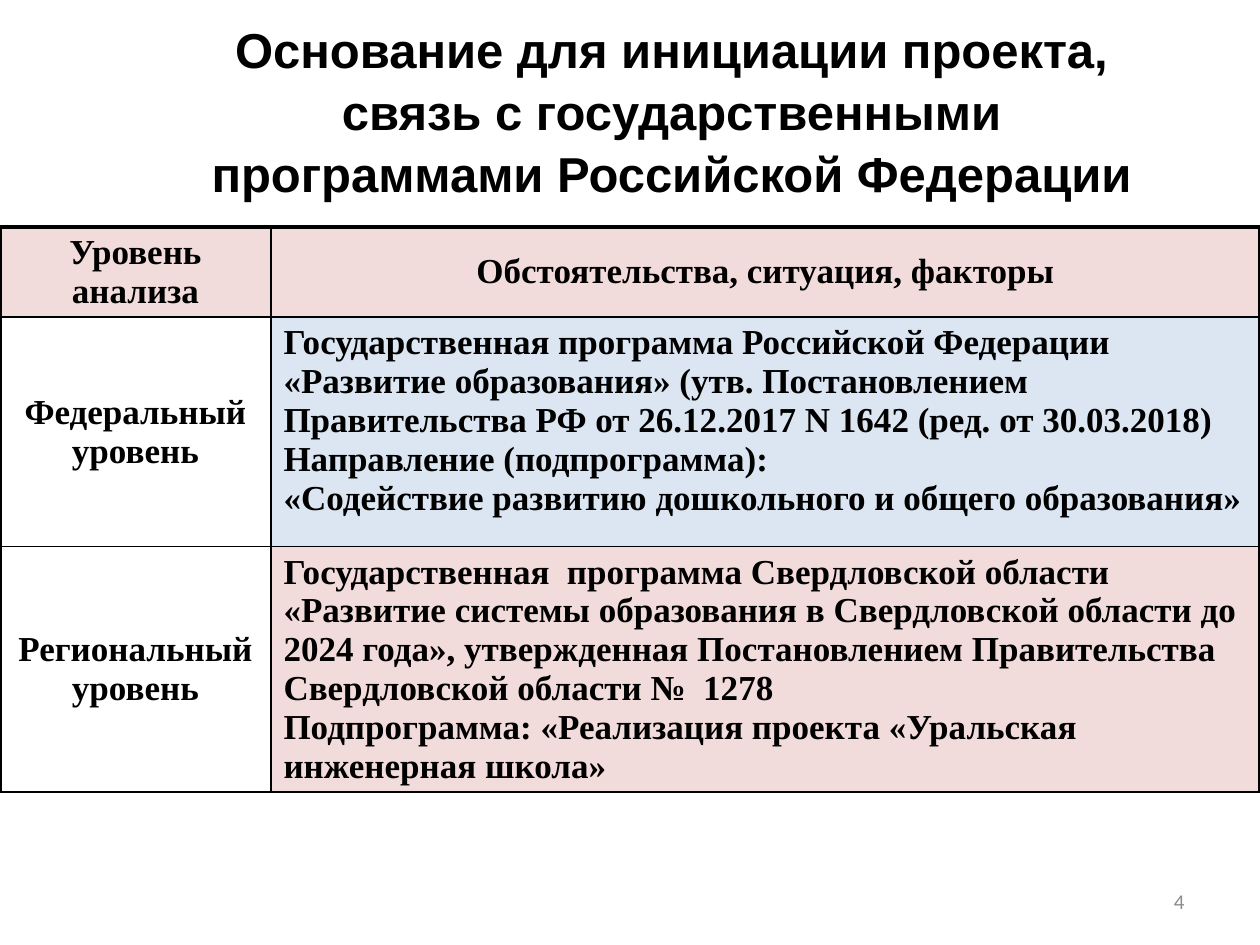
from dataclasses import dataclass

from lxml.etree import SubElement
from pptx import Presentation
from pptx.dml.color import RGBColor
from pptx.enum.text import MSO_ANCHOR, MSO_AUTO_SIZE, PP_ALIGN
from pptx.oxml.ns import qn
from pptx.util import Inches, Pt


@dataclass(frozen=True)
class Theme:
    ink: str = "000000"
    muted: str = "8C8C8C"
    pink: str = "F2DCDB"
    blue: str = "DCE6F2"
    title_size: int = 28
    table_size: int = 20
    number_size: int = 12
    outer_line: float = 2.25
    inner_line: float = 1


THEME = Theme()

TITLE = ("Основание для инициации проекта, связь с государственными "
         "программами Российской Федерации")
HEADER = ("Уровень анализа", "Обстоятельства, ситуация, факторы")
# Level, paragraphs, fill of the right-hand cell
LEVELS = [
    ("Федеральный уровень", [
        "Государственная программа Российской Федерации «Развитие образования» "
        "(утв. Постановлением Правительства РФ от 26.12.2017 N 1642 (ред. от 30.03.2018)",
        "Направление (подпрограмма):",
        "«Содействие развитию дошкольного и общего образования»",
    ], THEME.blue),
    ("Региональный уровень", [
        "Государственная  программа Свердловской области",
        "«Развитие системы образования в Свердловской области до 2024 года», "
        "утвержденная Постановлением Правительства Свердловской области №  1278",
        "Подпрограмма: «Реализация проекта «Уральская инженерная школа»",
    ], THEME.pink),
]


def write(tf, paragraphs, *, size, font, color=THEME.ink, bold=False,
          align=PP_ALIGN.LEFT, spacing=None):
    """Fill a text frame, one paragraph per string."""
    tf.word_wrap = True
    for i, text in enumerate(paragraphs):
        p = tf.add_paragraph() if i else tf.paragraphs[0]
        p.alignment = align
        if spacing:
            p.line_spacing = spacing
        r = p.add_run()
        r.text = text
        r.font.size = Pt(size)
        r.font.name = font
        r.font.bold = bold
        r.font.color.rgb = RGBColor.from_string(color)


def set_borders(cell, **widths):
    """Draw the cell's borders; they must precede its fill in the XML."""
    tc_pr = cell._tc.get_or_add_tcPr()
    for i, (side, width) in enumerate(widths.items()):
        ln = SubElement(tc_pr, qn(f"a:ln{side}"), w=str(Pt(width)))
        fill = SubElement(ln, qn("a:solidFill"))
        SubElement(fill, qn("a:srgbClr"), val=THEME.ink)
        tc_pr.insert(i, ln)


def fill_cell(cell, paragraphs, *, fill=None, centered=True):
    write(cell.text_frame, paragraphs, size=THEME.table_size,
          font="Times New Roman", bold=True,
          align=PP_ALIGN.CENTER if centered else PP_ALIGN.LEFT)
    cell.vertical_anchor = MSO_ANCHOR.MIDDLE if centered else MSO_ANCHOR.TOP
    if fill:
        cell.fill.solid()
        cell.fill.fore_color.rgb = RGBColor.from_string(fill)
    else:
        cell.fill.background()


def add_title(s):
    sp = s.shapes.title
    sp.left, sp.top = Inches(1.37), Inches(0.16)
    sp.width, sp.height = Inches(7.92), Inches(1.42)
    tf = sp.text_frame
    tf.auto_size = MSO_AUTO_SIZE.NONE
    tf.vertical_anchor = MSO_ANCHOR.MIDDLE
    write(tf, [TITLE], size=THEME.title_size, font="Arial", bold=True,
          align=PP_ALIGN.CENTER, spacing=1.05)


def add_levels_table(s):
    widths, heights = (2.15, 7.85), (0.71, 1.82, 1.63)
    table = s.shapes.add_table(len(heights), len(widths), Inches(0), Inches(1.8),
                               Inches(sum(widths)), Inches(sum(heights))).table
    for column, width in zip(table.columns, widths):
        column.width = Inches(width)
    for row, height in zip(table.rows, heights):
        row.height = Inches(height)

    # Header row, then one row per level
    for col, text in enumerate(HEADER):
        fill_cell(table.cell(0, col), [text], fill=THEME.pink)
    for row, (level, paragraphs, fill) in enumerate(LEVELS, start=1):
        fill_cell(table.cell(row, 0), [level])
        fill_cell(table.cell(row, 1), paragraphs, fill=fill, centered=False)

    # Heavy outline on the left, top and right
    outer, inner = THEME.outer_line, THEME.inner_line
    for row in range(len(heights)):
        for col in range(len(widths)):
            set_borders(table.cell(row, col),
                        L=inner if col else outer,
                        R=outer if col else inner,
                        T=inner if row else outer,
                        B=inner)


def add_page_number(s, number):
    sp = s.shapes.add_textbox(Inches(7.17), Inches(6.95), Inches(2.33), Inches(0.4))
    sp.text_frame.vertical_anchor = MSO_ANCHOR.MIDDLE
    write(sp.text_frame, [str(number)], size=THEME.number_size, font="Calibri",
          color=THEME.muted, align=PP_ALIGN.RIGHT)


def main():
    prs = Presentation()
    prs.slide_width, prs.slide_height = Inches(10), Inches(7.5)
    s = prs.slides.add_slide(prs.slide_layouts.get_by_name("Title Only"))
    add_title(s)
    add_levels_table(s)
    add_page_number(s, 4)
    prs.save("out.pptx")


if __name__ == "__main__":
    main()
